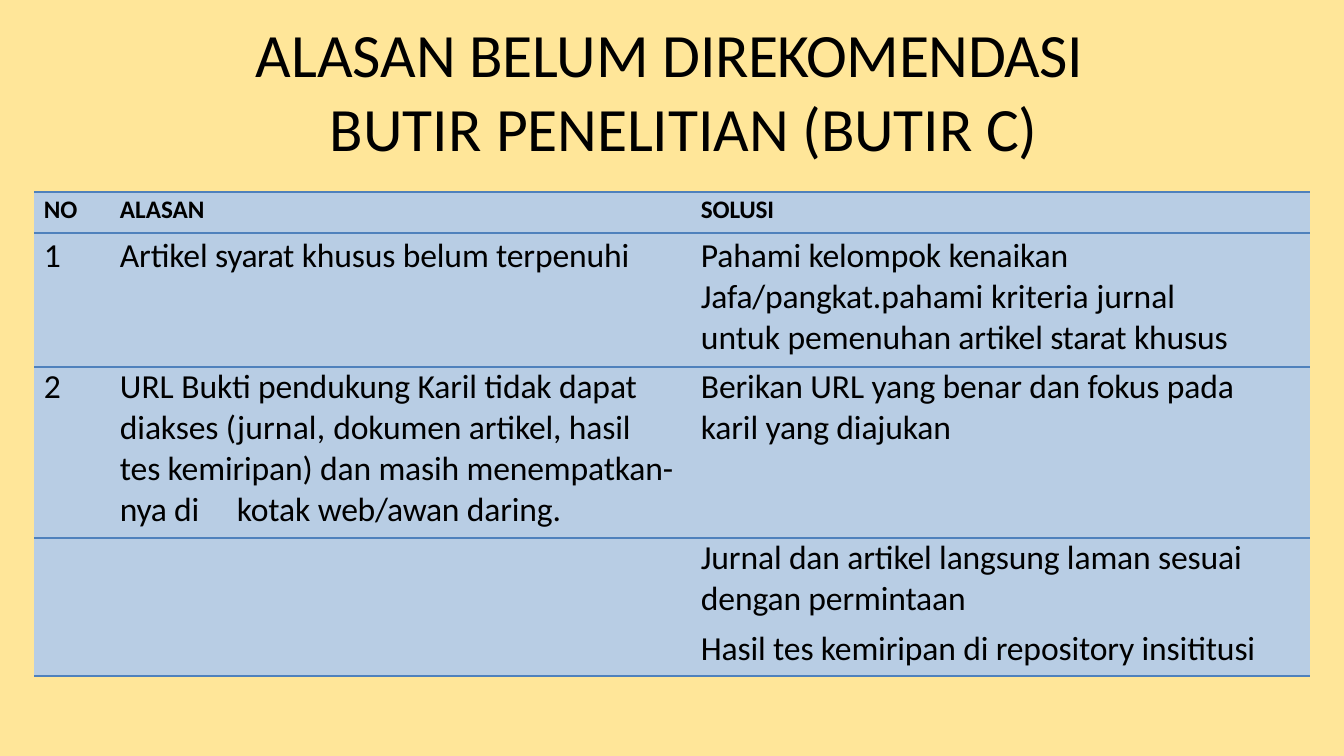
from lxml.etree import SubElement
from pptx import Presentation
from pptx.dml.color import RGBColor
from pptx.enum.text import MSO_ANCHOR
from pptx.oxml import parse_xml
from pptx.oxml.ns import nsdecls, qn
from pptx.util import Emu, Pt

EMU_PER_PX = 914400 / 100.8
NO_GRID_STYLE = "{2D5ABB26-0587-4C30-8999-92F81FD0307C}"


def px(length):
    return Emu(round(length * EMU_PER_PX))


def color(value):
    return RGBColor.from_string(value)


class SlideBuilder:
    font = "Calibri"
    ink = "000000"
    paper = "FFE699"
    cell_fill = "B8CDE4"
    rule = "4F81BC"

    def __init__(self, deck):
        self.page = deck.slides.add_slide(deck.slide_layouts[6])
        background = self.page.background.fill
        background.solid()
        background.fore_color.rgb = color(self.paper)

    def add_spans(self, para, spans, size, bold=False):
        """Add (text, letter spacing in 1/100 pt) spans; "\\v" starts a new line."""
        for text, spacing in spans:
            for number, line in enumerate(text.split("\v")):
                if number:
                    para.add_line_break()
                if not line:
                    continue
                span = para.add_run()
                span.text = line
                span.font.name = self.font
                span.font.size = Pt(size)
                span.font.bold = bold
                span.font.color.rgb = color(self.ink)
                span._r.get_or_add_rPr().set("spc", str(spacing))

    def title(self, left, top, width, height, spans, hanging):
        box = self.page.shapes.add_textbox(px(left), px(top), px(width), px(height))
        frame = box.text_frame
        frame.word_wrap = True
        frame.vertical_anchor = MSO_ANCHOR.MIDDLE
        frame.margin_left = frame.margin_right = frame.margin_bottom = 0
        frame.margin_top = px(1)
        para = frame.paragraphs[0]
        properties = para._p.get_or_add_pPr()
        properties.set("marL", str(px(hanging + 2)))
        properties.set("indent", str(px(-hanging)))
        self.add_spans(para, spans, 44)

    def border(self, cell, side):
        line = parse_xml(
            f'<a:{side} {nsdecls("a")} w="12700"><a:solidFill>'
            f'<a:srgbClr val="{self.rule}"/></a:solidFill></a:{side}>'
        )
        cell._tc.get_or_add_tcPr().insert(0, line)

    def cell(self, cell, paragraphs, left, top, size, bold, tab):
        cell.fill.solid()
        cell.fill.fore_color.rgb = color(self.cell_fill)
        cell.margin_left, cell.margin_top = px(left), px(top)
        cell.margin_right = cell.margin_bottom = 0
        frame = cell.text_frame
        for number, spans in enumerate(paragraphs):
            para = frame.add_paragraph() if number else frame.paragraphs[0]
            if any("\t" in text for text, _ in spans):
                tabs = SubElement(para._p.get_or_add_pPr(), qn("a:tabLst"))
                SubElement(tabs, qn("a:tab"), pos=str(px(tab)), algn="l")
            self.add_spans(para, spans, size, bold)

    def table(self, left, top, widths, heights, rows, insets, ruled_rows, tab):
        """Draw a table; ruled_rows are the rows with a line below them."""
        frame = self.page.shapes.add_table(
            len(heights), len(widths), px(left), px(top),
            px(sum(widths)), px(sum(heights)),
        )
        table = frame.table
        table.first_row = table.horz_banding = False
        table._tbl.tblPr.find(qn("a:tableStyleId")).text = NO_GRID_STYLE
        for column, width in zip(table.columns, widths):
            column.width = px(width)
        for index, (height, contents) in enumerate(zip(heights, rows)):
            table.rows[index].height = px(height)
            header = index == 0
            for column, paragraphs in enumerate(contents):
                cell = table.cell(index, column)
                self.cell(cell, paragraphs, insets[column], 3 if index < 2 else 0,
                          18 if header else 24, header, tab)
                if index in ruled_rows:
                    self.border(cell, "lnB")
                if header or index - 1 in ruled_rows:
                    self.border(cell, "lnT")


def main():
    deck = Presentation()
    deck.slide_width, deck.slide_height = px(1344), px(756)
    slide = SlideBuilder(deck)
    slide.title(
        254, 14, 838, 151,
        [("ALASAN ", -10), ("BELUM ", -20), ("DIREKOMENDASI ", -30),
         ("BUTIR ", 0), ("PENELITIAN (BUTIR C)", -10)],
        hanging=74,
    )
    reasons = [
        [[[("NO", -10)]], [[("ALASAN", 0)]], [[("SOLUSI", -10)]]],
        [
            [[("1", 0)]],
            [[("Artikel ", -10), ("syarat", -30), (" khusus belum terpenuhi", -10)]],
            [[("Pahami kelompok kenaikan\v", -10), ("Jafa/pangkat", -15),
              (".pahami kriteria jurnal\vuntuk ", 0),
              ("pemenuhan artikel ", -10), ("starat", -20), (" khusus", -10)]],
        ],
        [
            [[("2", 0)]],
            [[("URL ", 0), ("Bukti pendukung Karil tidak dapat\vdiakses ", -10),
              ("(jurnal, ", 10),
              ("dokumen artikel, hasil\vtes kemiripan) dan masih menempatkan-\v", -10),
              ("nya ", -30), ("di\tkotak ", -10), ("web/awan ", -20),
              ("daring.", -10)]],
            [[("Berikan ", -10), ("URL", 0), (" yang benar dan ", -10),
              ("fokus ", -20), ("pada", -10)],
             [("karil ", -10), ("yang ", -20), ("diajukan", -10)]],
        ],
        [[], [], [[("Jurnal dan artikel langsung laman sesuai", -10)],
                  [("dengan permintaan", -10)]]],
        [[], [], [[("Hasil tes kemiripan di repository insititusi", -10)]]],
    ]
    slide.table(
        34, 192, [65, 591, 620], [41, 134, 171, 91, 47], reasons,
        insets=[10, 21, 11], ruled_rows={0, 1, 4}, tab=117,
    )
    deck.save("out.pptx")


if __name__ == "__main__":
    main()
